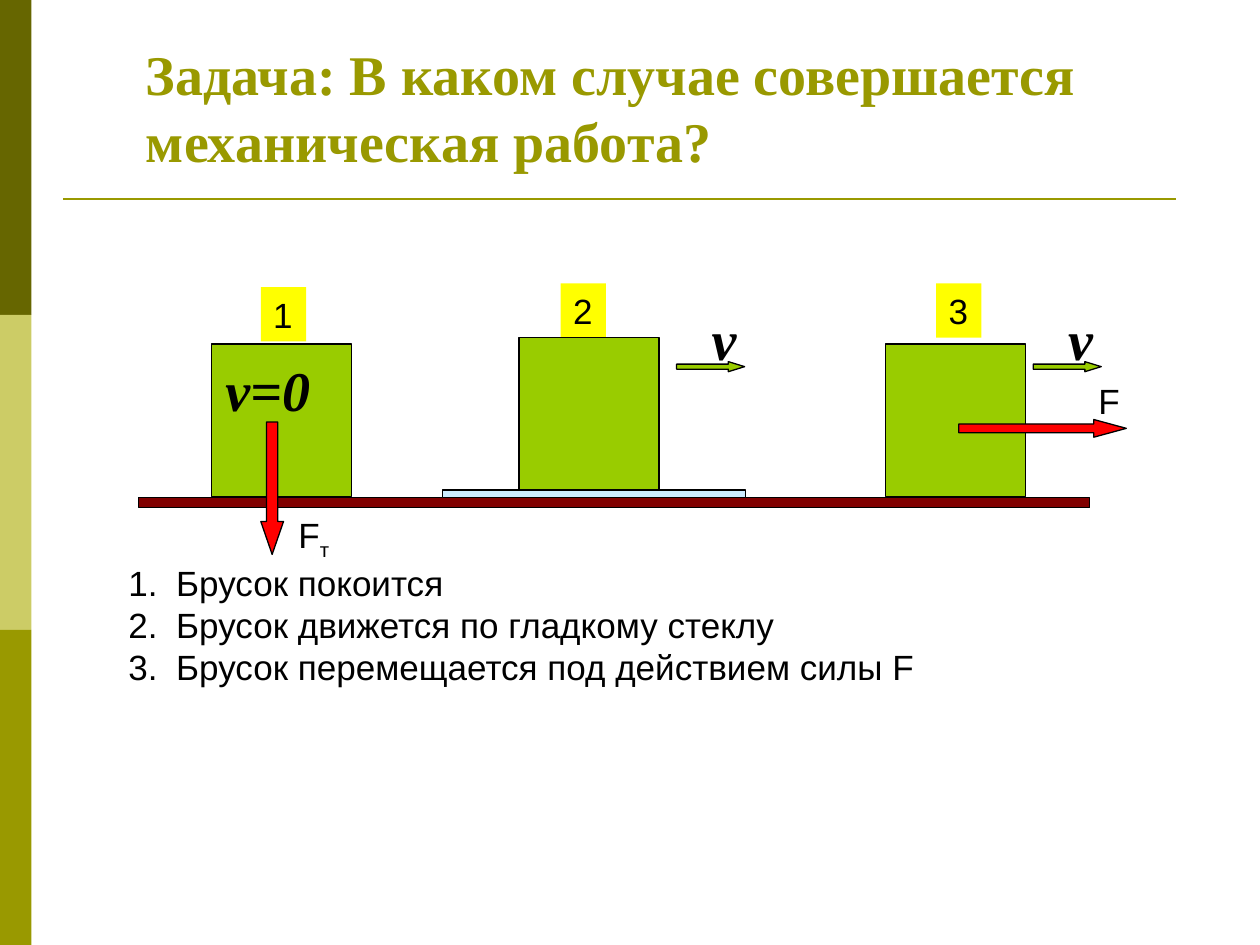
from pptx import Presentation
from pptx.dml.color import RGBColor
from pptx.enum.shapes import MSO_CONNECTOR, MSO_SHAPE
from pptx.enum.text import MSO_ANCHOR, MSO_AUTO_SIZE
from pptx.oxml.ns import qn
from pptx.util import Inches, Pt

BLACK = RGBColor(0x00, 0x00, 0x00)
DARK_OLIVE = RGBColor(0x66, 0x66, 0x00)
PALE_OLIVE = RGBColor(0xCC, 0xCC, 0x66)
OLIVE = RGBColor(0x99, 0x99, 0x00)
GREEN = RGBColor(0x99, 0xCC, 0x00)
MAROON = RGBColor(0x80, 0x00, 0x00)
YELLOW = RGBColor(0xFF, 0xFF, 0x00)
RED = RGBColor(0xFF, 0x00, 0x00)
GLASS = RGBColor(0xCC, 0xEC, 0xFF)


class SlideBuilder:
    """Draws the elements of one slide in a shared style."""

    def __init__(self, slide):
        self.slide = slide

    def shape(self, kind, left, top, width, height, fill, outlined=True, adjustments=()):
        shape = self.slide.shapes.add_shape(
            kind, Inches(left), Inches(top), Inches(width), Inches(height))
        shape.shadow.inherit = False
        shape.fill.solid()
        shape.fill.fore_color.rgb = fill
        if outlined:
            shape.line.color.rgb = BLACK
            shape.line.width = Pt(0.75)
        else:
            shape.line.fill.background()
        for index, value in enumerate(adjustments):
            shape.adjustments[index] = value
        return shape

    def rectangle(self, *box, fill, outlined=True):
        return self.shape(MSO_SHAPE.RECTANGLE, *box, fill, outlined)

    def arrow(self, kind, *box, fill, head):
        return self.shape(kind, *box, fill, adjustments=(0.5, head))

    def rule(self, left, right, y):
        line = self.slide.shapes.add_connector(
            MSO_CONNECTOR.STRAIGHT, Inches(left), Inches(y), Inches(right), Inches(y))
        line.line.color.rgb = OLIVE
        line.line.width = Pt(1.5)
        properties = line._element.spPr
        properties.append(properties.makeelement(qn("a:effectLst"), {}))

    def text(self, left, top, width, height, lines, size=20, name="Arial",
             color=BLACK, bold=False, italic=False, wrap=False, numbered=False):
        box = self.slide.shapes.add_textbox(
            Inches(left), Inches(top), Inches(width), Inches(height))
        frame = box.text_frame
        frame.word_wrap = wrap
        frame.auto_size = MSO_AUTO_SIZE.NONE if wrap else MSO_AUTO_SIZE.SHAPE_TO_FIT_TEXT
        frame.text = "\n".join(lines)
        for paragraph in frame.paragraphs:
            if numbered:
                self.number(paragraph)
            font = paragraph.font
            font.name, font.size, font.color.rgb = name, Pt(size), color
            font.bold, font.italic = bold, italic
        return box

    def number(self, paragraph):
        properties = paragraph._p.get_or_add_pPr()
        properties.set("marL", str(Inches(0.38)))
        properties.set("indent", str(Inches(-0.38)))
        properties.append(
            properties.makeelement(qn("a:buAutoNum"), {"type": "arabicPeriod"}))

    def case_label(self, left, top, number):
        box = self.text(left, top, 0.36, 0.43, [number])
        box.fill.solid()
        box.fill.fore_color.rgb = YELLOW

    def block(self, left, top):
        self.rectangle(left, top, 1.11, 1.21, fill=GREEN)

    def speed(self, left, top, width, label):
        self.text(left, top, width, 0.63, [label], size=32,
                  name="Times New Roman", bold=True, italic=True)

    def moving(self, left):
        self.arrow(MSO_SHAPE.RIGHT_ARROW, left, 2.87, 0.54, 0.08, fill=GREEN, head=1.62)
        self.speed(left + 0.18, 2.37, 0.4, "v")


def main():
    presentation = Presentation()
    presentation.slide_width, presentation.slide_height = Inches(10), Inches(7.5)
    builder = SlideBuilder(presentation.slides.add_slide(presentation.slide_layouts[6]))

    for index, color in enumerate((DARK_OLIVE, PALE_OLIVE, OLIVE)):
        builder.rectangle(0, 2.5 * index, 0.25, 2.5, fill=color, outlined=False)
    builder.rule(0.5, 9.33, 1.58)
    title = builder.text(
        1.06, 0.3, 7.83, 1.13, ["Задача: В каком случае совершается механическая работа?"],
        size=32, name="Times New Roman", color=OLIVE, bold=True, wrap=True)
    title.text_frame.vertical_anchor = MSO_ANCHOR.BOTTOM

    builder.block(1.68, 2.73)
    builder.rectangle(1.1, 3.95, 7.55, 0.08, fill=MAROON)
    for number, left, top in (("1", 2.07, 2.28), ("2", 4.45, 2.25), ("3", 7.43, 2.25)):
        builder.case_label(left, top, number)

    builder.arrow(MSO_SHAPE.DOWN_ARROW, 2.07, 3.35, 0.18, 1.05, fill=RED, head=1.45)
    gravity = builder.text(2.27, 4.03, 0.45, 0.43, ["F"])
    subscript = gravity.text_frame.paragraphs[0].add_run()
    subscript.text = "т"
    subscript.font._element.set("baseline", "-25000")
    builder.speed(1.69, 2.77, 0.88, "v=0")

    builder.rectangle(3.51, 3.89, 2.41, 0.06, fill=GLASS)
    builder.block(4.12, 2.68)
    builder.moving(5.37)

    builder.block(7.03, 2.73)
    builder.arrow(MSO_SHAPE.RIGHT_ARROW, 7.61, 3.33, 1.33, 0.14, fill=RED, head=1.84)
    builder.text(8.62, 2.96, 0.37, 0.43, ["F"])
    builder.moving(8.2)

    builder.text(0.92, 4.41, 6.44, 1.1, [
        "Брусок покоится",
        "Брусок движется по гладкому стеклу",
        "Брусок перемещается под действием силы F",
    ], numbered=True)
    presentation.save("out.pptx")


if __name__ == "__main__":
    main()
